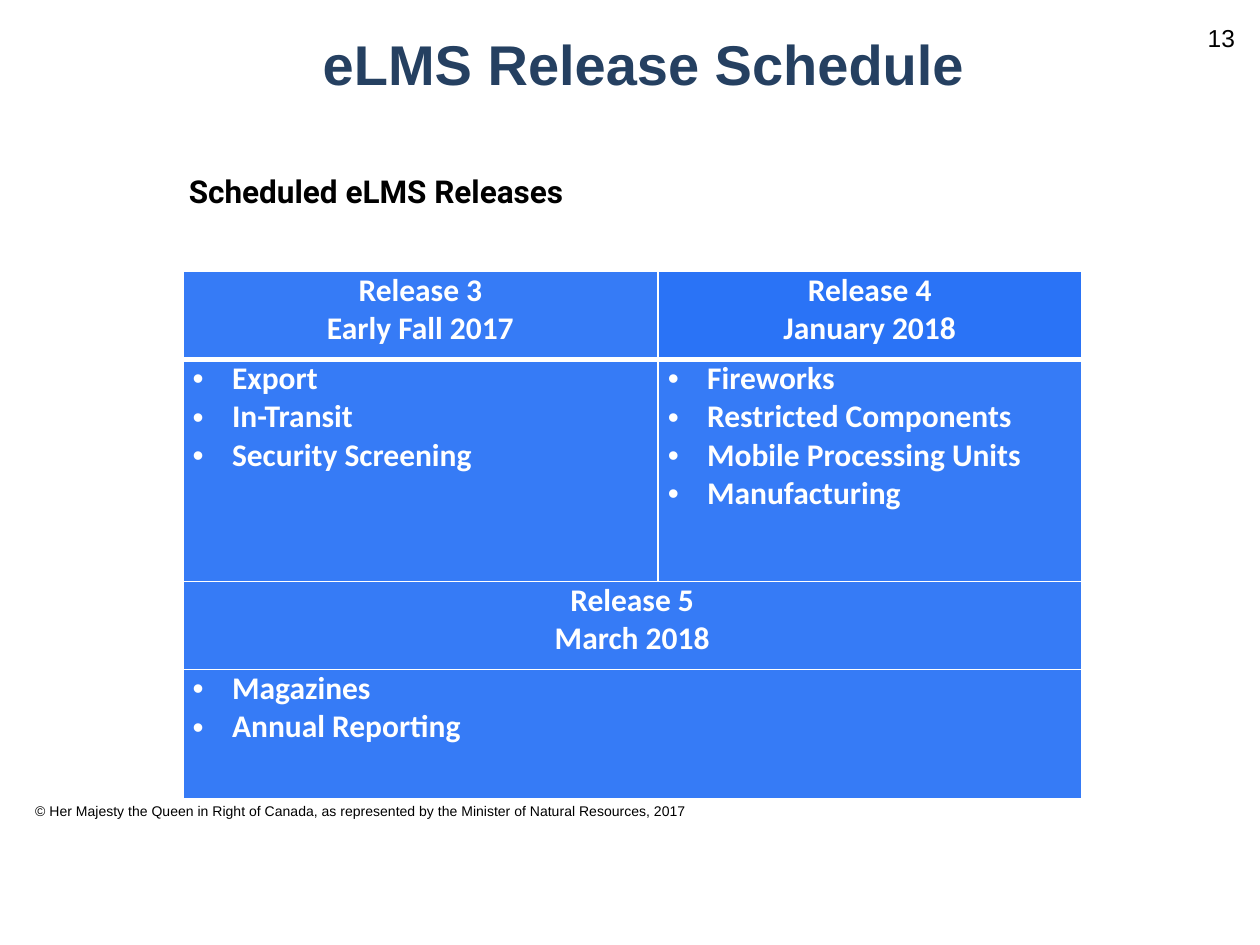
import pptx
import pptx.dml.color
import pptx.enum.text
import pptx.oxml
import pptx.oxml.ns
import pptx.util

Pt = pptx.util.Pt
ALIGN = pptx.enum.text.PP_ALIGN
ANCHOR = pptx.enum.text.MSO_ANCHOR

WHITE, BLACK, NAVY = "FFFFFF", "000000", "254061"
BLUE, BRIGHT_BLUE = "367BF6", "2A73F6"
COLUMN_WIDTHS = [271.5, 242]
ROW_HEIGHTS = [50.4, 126.8, 50.4, 74]
BULLET_INDENT = 22.5

# Each entry: row, column, columns spanned, lines, bulleted
RELEASES = [
    (0, 0, 1, ["Release 3", "Early Fall 2017"], False),
    (0, 1, 1, ["Release 4", "January 2018"], False),
    (1, 0, 1, ["Export", "In-Transit", "Security Screening"], True),
    (1, 1, 1, ["Fireworks", "Restricted Components",
               "Mobile Processing Units", "Manufacturing"], True),
    (2, 0, 2, ["Release 5", "March 2018"], False),
    (3, 0, 2, ["Magazines", "Annual Reporting"], True),
]


def color(hex_code):
    return pptx.dml.color.RGBColor.from_string(hex_code)


def add_bullet(paragraph):
    properties = paragraph._p.get_or_add_pPr()
    properties.set("marL", str(Pt(BULLET_INDENT)))
    properties.set("indent", str(-Pt(BULLET_INDENT)))
    for tag, attribute, value in (("a:buFont", "typeface", "Arial"),
                                  ("a:buChar", "char", "•")):
        element = pptx.oxml.ns.qn(tag)
        child = properties.makeelement(element, {attribute: value})
        properties.append(child)


def write_text(frame, lines, size=18, font="Arial", hex_code=BLACK,
               bold=False, align=ALIGN.LEFT, bulleted=False):
    frame.word_wrap = True
    for index, line in enumerate(lines):
        paragraph = frame.add_paragraph() if index else frame.paragraphs[0]
        paragraph.alignment = align
        if bulleted:
            add_bullet(paragraph)
        run = paragraph.add_run()
        run.text = line
        run.font.size = Pt(size)
        run.font.name = font
        run.font.bold = bold
        run.font.color.rgb = color(hex_code)


def add_label(slide, box, text, anchor=ANCHOR.TOP, **text_format):
    label = slide.shapes.add_textbox(*map(Pt, box))
    label.text_frame.vertical_anchor = anchor
    write_text(label.text_frame, [text], **text_format)


def set_borders(cell, **widths):
    """Draw white borders; widths are keyed by side: L, R, T and B."""
    properties = cell._tc.get_or_add_tcPr()
    for side, width in widths.items():
        properties.append(pptx.oxml.parse_xml(
            f'<a:ln{side} {pptx.oxml.ns.nsdecls("a")} w="{Pt(width)}">'
            f'<a:solidFill><a:srgbClr val="{WHITE}"/></a:solidFill>'
            f'</a:ln{side}>'))


def add_release_table(slide, box):
    table = slide.shapes.add_table(
        len(ROW_HEIGHTS), len(COLUMN_WIDTHS), *map(Pt, box)).table
    for column, width in zip(table.columns, COLUMN_WIDTHS):
        column.width = Pt(width)
    for row_index, (row, height) in enumerate(zip(table.rows, ROW_HEIGHTS)):
        row.height = Pt(height)
        for column_index, cell in enumerate(row.cells):
            set_borders(cell, L=1, R=1, T=3 if row_index == 1 else 1,
                        B=3 if row_index == 0 else 1)
            cell.margin_left = cell.margin_right = Pt(5.6)
            cell.margin_top = cell.margin_bottom = 0
            cell.fill.solid()
            is_bright = (row_index, column_index) == (0, 1)
            cell.fill.fore_color.rgb = color(
                BRIGHT_BLUE if is_bright else BLUE)
    for row_index, column_index, span, lines, bulleted in RELEASES:
        cell = table.cell(row_index, column_index)
        if span > 1:
            cell.merge(table.cell(row_index, column_index + span - 1))
        write_text(cell.text_frame, lines, font="Calibri", hex_code=WHITE,
                   bold=True, bulleted=bulleted,
                   align=ALIGN.LEFT if bulleted else ALIGN.CENTER)


def add_header(slide, box):
    left, top, width, height = box
    add_label(slide, (left, top, 655, height), "eLMS Release Schedule",
              anchor=ANCHOR.MIDDLE, size=32, hex_code=NAVY, bold=True,
              align=ALIGN.CENTER)
    number_width = 36.7
    add_label(slide, (left + width - number_width, top, number_width, 28.8),
              "13", anchor=ANCHOR.MIDDLE, size=14, align=ALIGN.RIGHT)


def main():
    deck = pptx.Presentation()
    deck.slide_width, deck.slide_height = Pt(720), Pt(540)
    slide = deck.slides.add_slide(deck.slide_layouts[6])
    add_label(
        slide, (13, 455, 392, 26.6),
        "© Her Majesty the Queen in Right of Canada, as represented by "
        "the Minister of Natural Resources, 2017", size=8)
    add_header(slide, (40.3, 7.2, 672.5, 57.6))
    add_release_table(
        slide, (104.5, 155, sum(COLUMN_WIDTHS), sum(ROW_HEIGHTS)))
    add_label(slide, (100.8, 95, 286.6, 28.8), "Scheduled eLMS Releases",
              font="Roboto", bold=True)
    deck.save("out.pptx")


if __name__ == "__main__":
    main()
